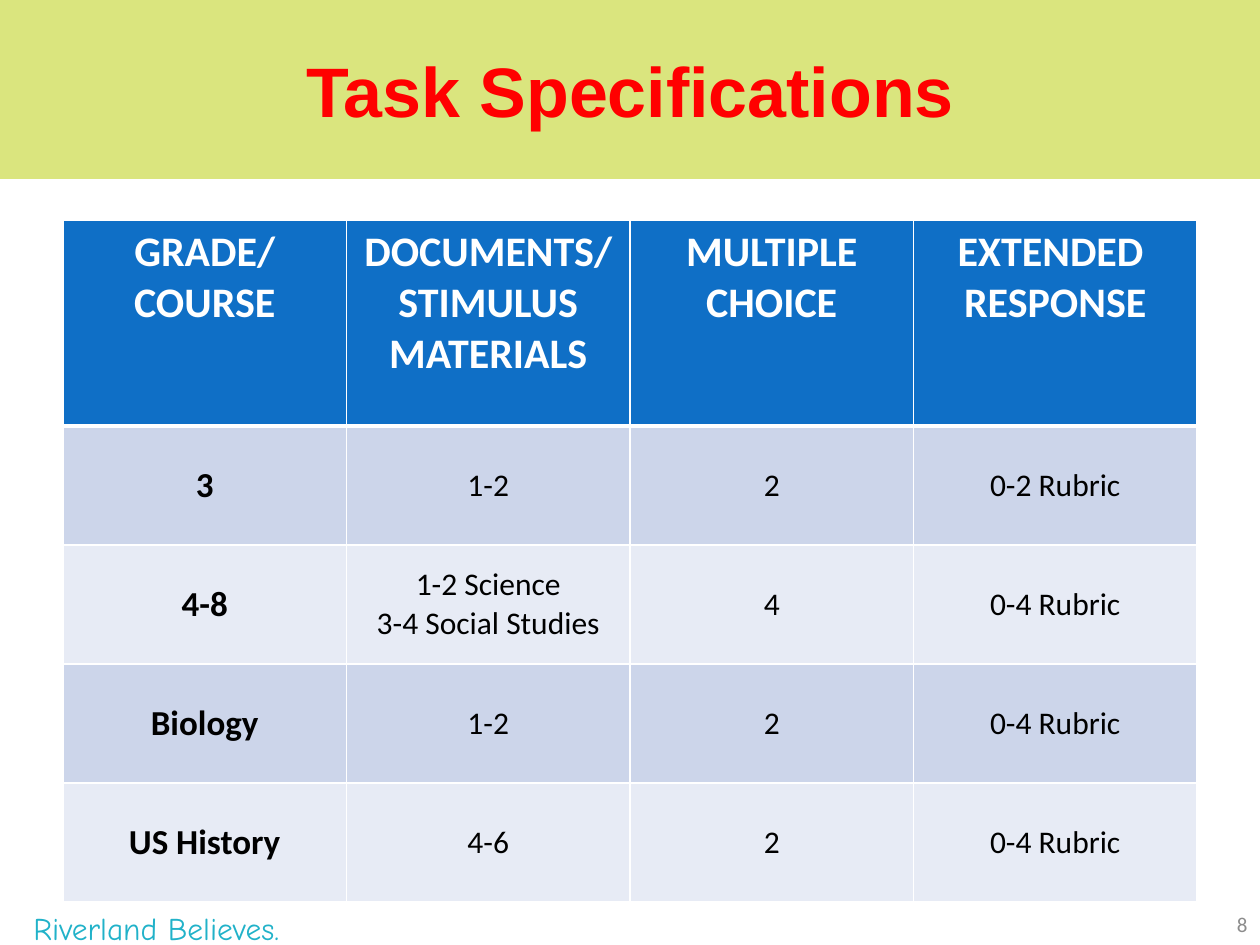
"""Build the Task Specifications slide with its table of grades and courses."""
from lxml import etree
from pptx import Presentation, util as u
from pptx.dml.color import RGBColor
from pptx.enum import shapes, text
from pptx.oxml import ns

SCALE = 914400 / 126


def px(length):
    return u.Emu(round(length * SCALE))


def write(frame, content, size, color, font="Calibri", bold=False, align="CENTER", anchor="MIDDLE"):
    frame.word_wrap = True
    frame.vertical_anchor = text.MSO_ANCHOR[anchor]
    frame.text = content
    for paragraph in frame.paragraphs:
        paragraph.alignment = text.PP_ALIGN[align]
        for run in paragraph.runs:
            run.font.name = font
            run.font.size = u.Pt(size)
            run.font.bold = bold
            run.font.color.rgb = RGBColor.from_string(color)


presentation = Presentation()
presentation.slide_width, presentation.slide_height = px(1260), px(945)
slide = presentation.slides.add_slide(presentation.slide_layouts[6])

banner = slide.shapes.add_shape(shapes.MSO_SHAPE.RECTANGLE, 0, 0, px(1260), px(179))
banner.shadow.inherit = False
banner.fill.solid()
banner.fill.fore_color.rgb = RGBColor.from_string("DAE57E")
banner.line.fill.background()

rows = [
    ["GRADE/\nCOURSE", "DOCUMENTS/\nSTIMULUS MATERIALS", "MULTIPLE\nCHOICE", "EXTENDED \nRESPONSE"],
    ["3", "1-2", "2", "0-2 Rubric"],
    ["4-8", "1-2 Science\n3-4 Social Studies", "4", "0-4 Rubric"],
    ["Biology", "1-2", "2", "0-4 Rubric"],
    ["US History", "4-6", "2", "0-4 Rubric"],
]
table = slide.shapes.add_table(5, 4, px(63), px(220), px(1134), px(682)).table
for row_index, row in enumerate(rows):
    header = row_index == 0
    table.rows[row_index].height = px(206 if header else 119)
    for column_index, content in enumerate(row):
        cell = table.cell(row_index, column_index)
        cell.fill.solid()
        fill = "0F6FC6" if header else "CCD5EA" if row_index % 2 else "E7EBF5"
        cell.fill.fore_color.rgb = RGBColor.from_string(fill)
        write(cell.text_frame, content, 24 if header else 18 if column_index else 20,
              "FFFFFF" if header else "000000", bold=header or column_index == 0)
        cell.vertical_anchor = text.MSO_ANCHOR.TOP if header else text.MSO_ANCHOR.MIDDLE
        properties = cell.fill._xPr
        for position, side in enumerate(["lnL", "lnR", "lnT", "lnB"]):
            thick = (row_index, side) in [(0, "lnB"), (1, "lnT")]
            border = etree.Element(ns.qn("a:" + side), w=str(u.Pt(3 if thick else 1)))
            solid = etree.SubElement(border, ns.qn("a:solidFill"))
            etree.SubElement(solid, ns.qn("a:srgbClr"), val="FFFFFF")
            properties.insert(position, border)

labels = [
    ((0, 0, 1260, 179), "Task Specifications", dict(size=40, color="FF0000", font="Arial", bold=True)),
    ((966, 903, 294, 42), "8", dict(size=12, color="8C8C8C", align="RIGHT")),
    ((21, 903, 399, 42), "Riverland Believes.",
     dict(size=18, color="21B2C9", font="Comic Neue", align="LEFT", anchor="TOP")),
]
for box, content, style in labels:
    label = slide.shapes.add_textbox(*map(px, box))
    write(label.text_frame, content, **style)

presentation.save("out.pptx")
